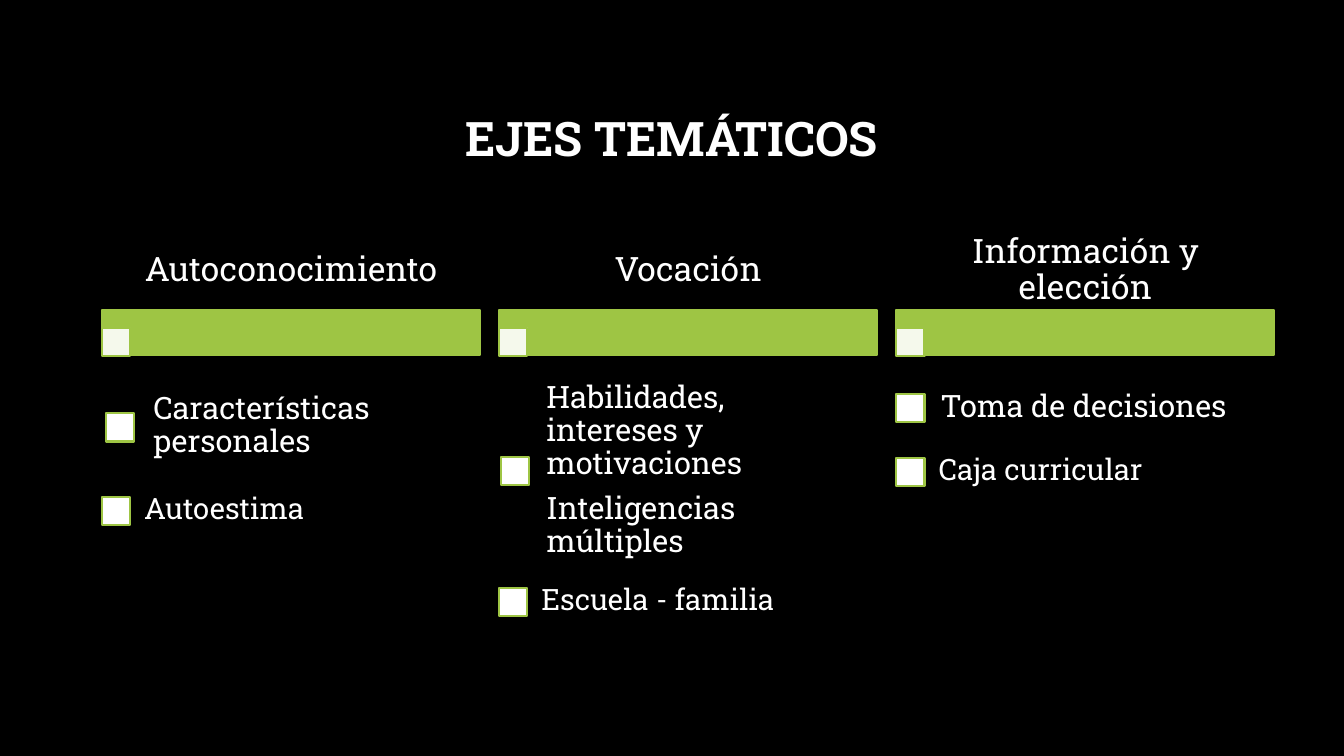
"""Build the thematic axes slide with three columns of topics."""
from dataclasses import dataclass

from lxml.etree import SubElement
from pptx import Presentation
from pptx.dml.color import RGBColor
from pptx.enum.shapes import MSO_SHAPE
from pptx.enum.text import MSO_ANCHOR, PP_ALIGN
from pptx.oxml.ns import qn
from pptx.slide import Slide
from pptx.util import Inches, Pt

BLACK = RGBColor(0x00, 0x00, 0x00)
WHITE = RGBColor(0xFF, 0xFF, 0xFF)
GREEN = RGBColor(0x9E, 0xC5, 0x44)
FONT = "Roboto Slab"

COLUMN_LEFT = 1.01
COLUMN_PITCH = 3.94
COLUMN_WIDTH = 3.75
HEADING_TOP = 2.29
BAR_TOP = 3.08
BAR_HEIGHT = 0.44
MARKER_SIZE = 0.28


@dataclass(frozen=True)
class Frame:
    left: float
    top: float
    width: float
    height: float


@dataclass(frozen=True)
class Topic:
    lines: tuple[str, ...]
    top: float
    height: float
    size: float = 21
    marker_indent: float = 0
    text_indent: float = 0.26
    inset: float = 0.16


@dataclass(frozen=True)
class Column:
    heading: str
    topics: tuple[Topic, ...]


COLUMNS = (
    Column("Autoconocimiento", (
        Topic(("Características personales",), 3.71, 1.04, 22, 0.04, 0.34, 0.17),
        Topic(("Autoestima",), 4.74, 0.64),
    )),
    Column("Vocación", (
        Topic(("Habilidades, intereses y motivaciones", "Inteligencias múltiples"),
              3.7, 1.93, 22, 0.02, 0.3, 0.17),
        Topic(("Escuela - familia",), 5.64, 0.64),
    )),
    Column("Información y elección", (
        Topic(("Toma de decisiones",), 3.72, 0.64, 22, 0, 0.27, 0.17),
        Topic(("Caja curricular",), 4.35, 0.64),
    )),
)


def add_rectangle(page: Slide, frame: Frame, color: RGBColor, opacity: int = 100) -> None:
    """Draw a green-edged rectangle with the given fill and opacity."""
    box = page.shapes.add_shape(
        MSO_SHAPE.RECTANGLE, Inches(frame.left), Inches(frame.top),
        Inches(frame.width), Inches(frame.height))
    box.shadow.inherit = False
    box.fill.solid()
    box.fill.fore_color.rgb = color
    box.line.color.rgb = GREEN
    box.line.width = Pt(1.5)
    if opacity < 100:
        tint = box.fill._xPr.find(qn("a:solidFill"))[0]
        SubElement(tint, qn("a:alpha"), val=str(opacity * 1000))


def add_text(page: Slide, frame: Frame, lines: tuple[str, ...], size: float,
             inset_x: float, inset_y: float, align: PP_ALIGN = PP_ALIGN.LEFT,
             bold: bool = False) -> None:
    """Write vertically centred white paragraphs in a wrapping box."""
    box = page.shapes.add_textbox(
        Inches(frame.left), Inches(frame.top), Inches(frame.width), Inches(frame.height))
    body = box.text_frame
    body.word_wrap = True
    body.vertical_anchor = MSO_ANCHOR.MIDDLE
    body.margin_left = body.margin_right = Inches(inset_x)
    body.margin_top = body.margin_bottom = Inches(inset_y)
    for index, line in enumerate(lines):
        para = body.add_paragraph() if index else body.paragraphs[0]
        para.alignment = align
        para.line_spacing = 0.9
        para.space_before = Pt(8 if index else 0)
        span = para.add_run()
        span.text = line
        span.font.name = FONT
        span.font.size = Pt(size)
        span.font.bold = bold
        span.font.color.rgb = WHITE


def add_topic(page: Slide, left: float, topic: Topic) -> None:
    """Place a topic with its square marker centred beside it."""
    marker_top = topic.top + topic.height / 2 - MARKER_SIZE / 2 + 0.01
    add_rectangle(
        page, Frame(left + topic.marker_indent, marker_top, MARKER_SIZE, MARKER_SIZE), WHITE)
    frame = Frame(left + topic.text_indent, topic.top,
                  COLUMN_WIDTH - topic.text_indent, topic.height)
    add_text(page, frame, topic.lines, topic.size, topic.inset, topic.inset)


def add_column(page: Slide, left: float, column: Column) -> None:
    """Draw one column: bar, corner square, heading and topics."""
    add_rectangle(page, Frame(left, BAR_TOP, COLUMN_WIDTH, BAR_HEIGHT), GREEN)
    add_rectangle(page, Frame(left, 3.25, MARKER_SIZE, MARKER_SIZE), WHITE, 90)
    add_text(page, Frame(left, HEADING_TOP, COLUMN_WIDTH, BAR_TOP - HEADING_TOP),
             (column.heading,), 24, 0.05, 0.03, PP_ALIGN.CENTER)
    for topic in column.topics:
        add_topic(page, left, topic)


def main() -> None:
    """Create the deck and save it."""
    deck = Presentation()
    deck.slide_width = Inches(13.33)
    deck.slide_height = Inches(7.5)
    page = deck.slides.add_slide(deck.slide_layouts[6])
    page.background.fill.solid()
    page.background.fill.fore_color.rgb = BLACK
    add_text(page, Frame(1, 0.67, 11.32, 1.45), ("EJES TEMÁTICOS",), 34,
             0.1, 0.05, PP_ALIGN.CENTER, bold=True)
    for index, column in enumerate(COLUMNS):
        add_column(page, COLUMN_LEFT + index * COLUMN_PITCH, column)
    deck.save("out.pptx")


if __name__ == "__main__":
    main()
